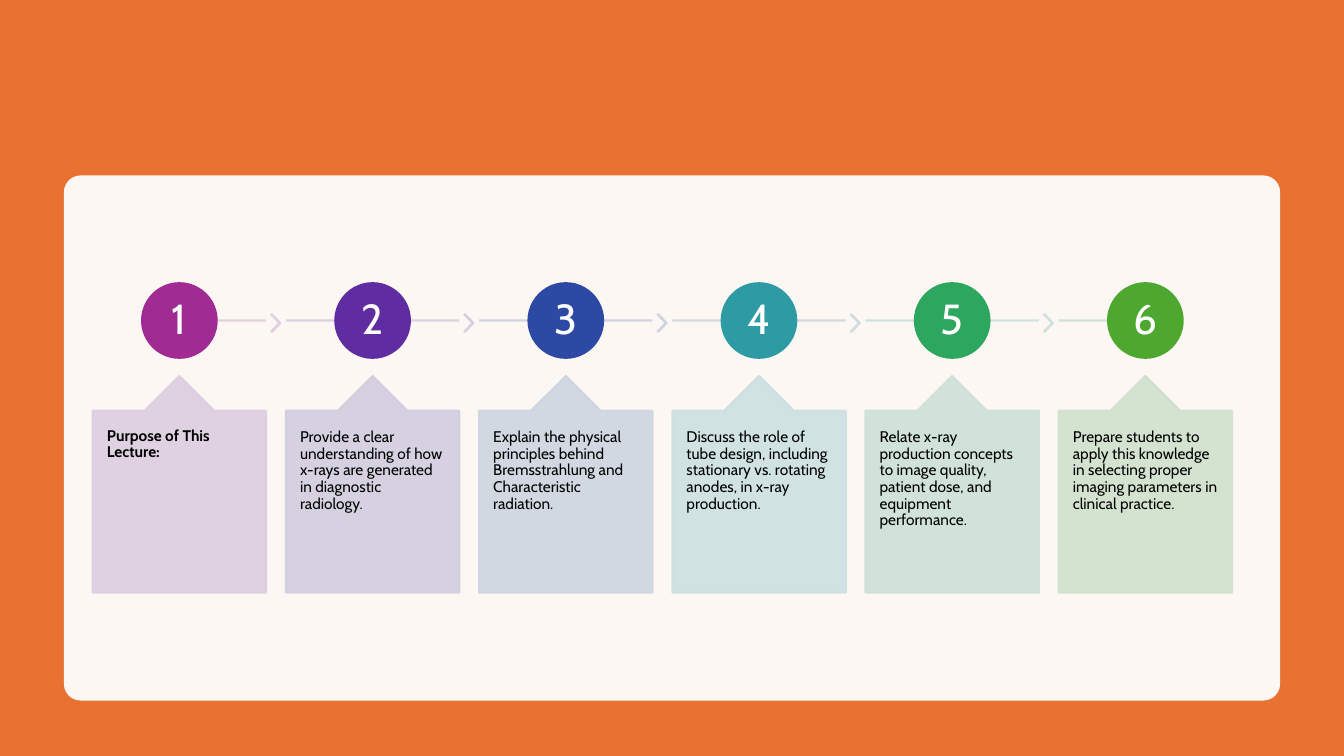
from dataclasses import dataclass

from lxml import etree
from pptx import Presentation
from pptx import util as u
from pptx.dml.color import RGBColor
from pptx.enum import shapes, text
from pptx.oxml.ns import qn

# Grid: 160 columns by 90 rows of square cells
COLUMNS, ROWS, CELL = 160, 90, 76200
FONT = "Cabin"
LINE_WIDTH = u.Pt(1.5)

# Timeline measures, in cells
FIRST_LEFT, PITCH = 11.04, 23
CARD_WIDTH, CARD_TOP, CARD_HEIGHT = 20.64, 44.76, 25.8
BODY_TOP, BODY_HEIGHT = 48.96, 21.6
TRACK_ROW, CIRCLE_SIZE, NUMBER_SIZE = 38.16, 8.88, 6.24
CHEVRON_OFFSET, CHEVRON_TOP = 21.24, 37.44

COLOURS = {
    "background": "E97132", "panel": "FFFFFF", "number": "FFFFFF", "body": "000000",
    "circle1": "A02B93", "track1": "DFCDDC", "chevron1": "DFCDDF", "card1": "DCCDE0",
    "circle2": "5F2CA1", "track2": "D8CDE0", "chevron2": "D5CDE0", "card2": "D1CDE0",
    "circle3": "2C49A3", "track3": "CDCDE0", "chevron3": "CDD1E0", "card3": "CDD5E0",
    "circle4": "2D9AA4", "track4": "CDD8E0", "chevron4": "CDDCE0", "card4": "CDE0E1",
    "circle5": "2DA65F", "track5": "CDE1DD", "chevron5": "CDE1DA", "card5": "CDE1D6",
    "circle6": "4EA72E", "track6": "CDE1D2", "card6": "D0E1CD",
}


@dataclass(frozen=True)
class Box:
    left: float
    top: float
    width: float
    height: float

    def lengths(self) -> list[u.Emu]:
        return [cells(n) for n in (self.left, self.top, self.width, self.height)]


@dataclass(frozen=True)
class Step:
    number: int
    body: str
    bold: bool = False


STEPS = [
    Step(1, "Purpose of This Lecture:", bold=True),
    Step(2, "Provide a clear understanding of how x-rays are generated in diagnostic radiology."),
    Step(3, "Explain the physical principles behind Bremsstrahlung and Characteristic radiation."),
    Step(4, "Discuss the role of tube design, including stationary vs. rotating anodes, "
            "in x-ray production."),
    Step(5, "Relate x-ray production concepts to image quality, patient dose, "
            "and equipment performance."),
    Step(6, "Prepare students to apply this knowledge in selecting proper imaging parameters "
            "in clinical practice."),
]


def cells(count: float) -> u.Emu:
    return u.Emu(round(count * CELL))


def colour(name: str) -> RGBColor:
    return RGBColor.from_string(COLOURS[name])


def set_opacity(shape, percent: int) -> None:
    for element in shape._element.spPr.iter(qn("a:srgbClr")):
        etree.SubElement(element, qn("a:alpha"), val=str(percent * 1000))


def add_figure(slide, kind, box: Box, name: str, adjustments: tuple = (),
               outlined: bool = True, opacity: int = 100) -> None:
    shape = slide.shapes.add_shape(kind, *box.lengths())
    shape.shadow.inherit = False
    for index, value in enumerate(adjustments):
        shape.adjustments[index] = value
    shape.fill.solid()
    shape.fill.fore_color.rgb = colour(name)
    if outlined:
        shape.line.color.rgb = colour(name)
        shape.line.width = LINE_WIDTH
    else:
        shape.line.fill.background()
    if opacity < 100:
        set_opacity(shape, opacity)


def add_track(slide, start: float, end: float, name: str) -> None:
    line = slide.shapes.add_connector(
        shapes.MSO_CONNECTOR.STRAIGHT,
        cells(start), cells(TRACK_ROW), cells(end), cells(TRACK_ROW))
    line.line.color.rgb = colour(name)
    line.line.width = LINE_WIDTH
    set_opacity(line, 90)
    etree.SubElement(line._element.spPr, qn("a:effectLst"))


def add_text(slide, box: Box, wording: str, size: int, name: str, insets: tuple,
             centred: bool = False, bold: bool = False) -> None:
    frame = slide.shapes.add_textbox(*box.lengths()).text_frame
    frame.word_wrap = True
    frame.margin_left = frame.margin_right = cells(insets[0])
    frame.margin_top = frame.margin_bottom = cells(insets[1])
    frame.vertical_anchor = text.MSO_ANCHOR.MIDDLE if centred else text.MSO_ANCHOR.TOP
    paragraph = frame.paragraphs[0]
    paragraph.alignment = text.PP_ALIGN.CENTER if centred else text.PP_ALIGN.LEFT
    paragraph.line_spacing = 0.9
    run = paragraph.add_run()
    run.text = wording
    run.font.name = FONT
    run.font.size = u.Pt(size)
    run.font.bold = bold
    run.font.color.rgb = colour(name)


def add_step(slide, step: Step) -> None:
    number = step.number
    left = FIRST_LEFT + (number - 1) * PITCH
    centre, right = left + CARD_WIDTH / 2, left + CARD_WIDTH
    kinds = shapes.MSO_SHAPE

    def centred_square(size: float) -> Box:
        return Box(centre - size / 2, TRACK_ROW - size / 2, size, size)

    # Track: the first starts and the last ends near its circle's centre
    first, last = number == 1, number == len(STEPS)
    add_track(slide, centre + 1.2 if first else left, centre if last else right,
              f"track{number}")
    if not last:
        chevron = Box(left + CHEVRON_OFFSET, CHEVRON_TOP, 1.08, 2.04)
        add_figure(slide, kinds.CHEVRON, chevron, f"chevron{number}", (0.9,), opacity=90)

    # Numbered circle
    add_figure(slide, kinds.OVAL, centred_square(CIRCLE_SIZE), f"circle{number}")
    add_text(slide, centred_square(NUMBER_SIZE), str(number), 30, "number",
             (0.36, 0.36), centred=True)

    # Card with its wording
    add_figure(slide, kinds.UP_ARROW_CALLOUT, Box(left, CARD_TOP, CARD_WIDTH, CARD_HEIGHT),
               f"card{number}", (0.5, 0.2, 0.2, 1), opacity=90)
    add_text(slide, Box(left, BODY_TOP, CARD_WIDTH, BODY_HEIGHT), step.body, 11, "body",
             (1.68, 2.16), bold=step.bold)


def main() -> None:
    presentation = Presentation()
    presentation.slide_width, presentation.slide_height = cells(COLUMNS), cells(ROWS)
    slide = presentation.slides.add_slide(presentation.slide_layouts[6])

    # Backdrop and panel
    add_figure(slide, shapes.MSO_SHAPE.RECTANGLE, Box(0, 0, COLUMNS, ROWS), "background",
               outlined=False)
    add_figure(slide, shapes.MSO_SHAPE.ROUNDED_RECTANGLE, Box(7.6, 20.88, 144.8, 62.52),
               "panel", (0.032,), outlined=False, opacity=95)

    # Timeline
    for step in STEPS:
        add_step(slide, step)

    presentation.save("out.pptx")


if __name__ == "__main__":
    main()
